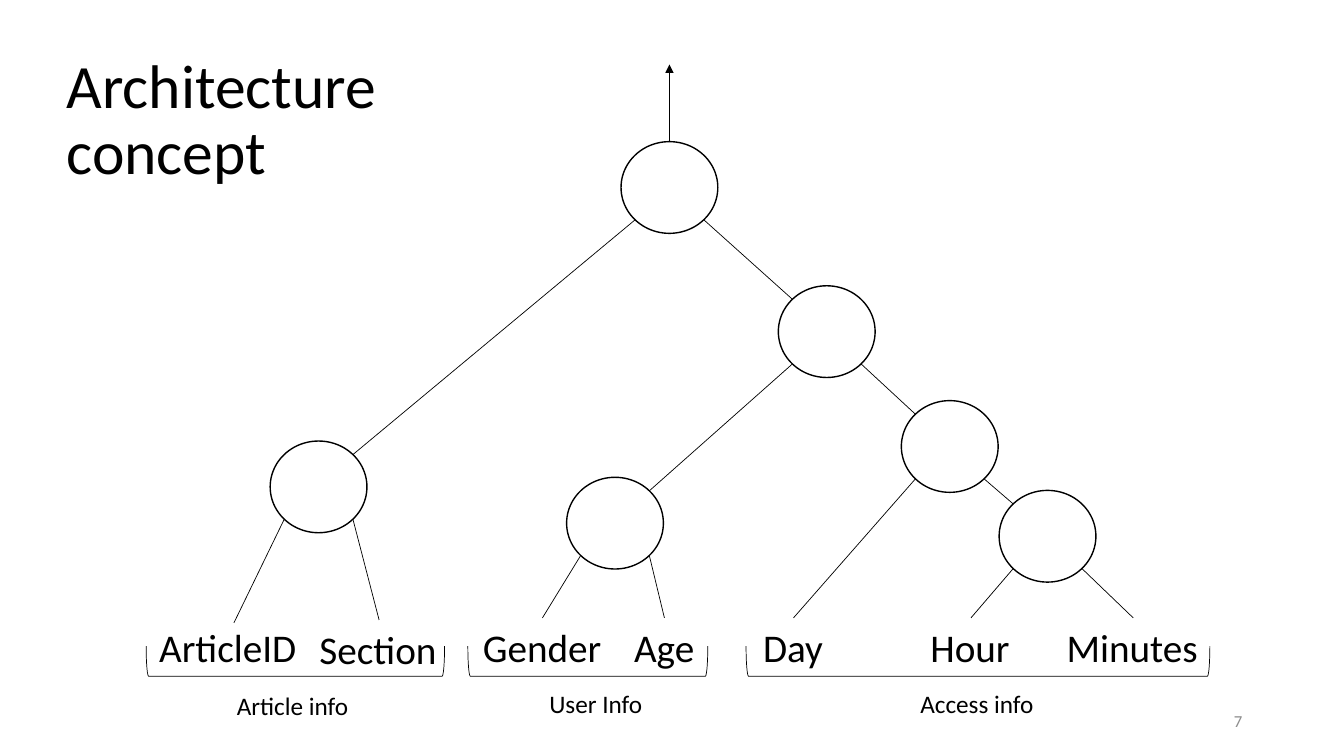
from dataclasses import dataclass

from lxml import etree
from pptx import Presentation
from pptx.dml.color import RGBColor
from pptx.enum.shapes import MSO_CONNECTOR, MSO_SHAPE
from pptx.enum.text import MSO_ANCHOR, MSO_AUTO_SIZE, PP_ALIGN
from pptx.oxml.ns import qn
from pptx.util import Inches, Pt

LINE = MSO_CONNECTOR.STRAIGHT
OVAL, BRACKET = MSO_SHAPE.OVAL, MSO_SHAPE.LEFT_BRACKET
MIDDLE, TOP = MSO_ANCHOR.MIDDLE, MSO_ANCHOR.TOP
LEFT, RIGHT = PP_ALIGN.LEFT, PP_ALIGN.RIGHT
GROW, FIXED = MSO_AUTO_SIZE.SHAPE_TO_FIT_TEXT, MSO_AUTO_SIZE.NONE


@dataclass(frozen=True)
class Theme:
    font: str = "Calibri"
    ink: RGBColor = RGBColor(0, 0, 0)
    paper: RGBColor = RGBColor(255, 255, 255)
    grey: RGBColor = RGBColor(0x8C, 0x8C, 0x8C)
    title: float = 44
    leaf: float = 28
    group: float = 18
    number: float = 12
    thin: float = 0.5
    rim: float = 1


WIDE, HIGH = 0.96, 0.91
DX, DY = 0.34, 0.32  # from a node's centre to its diagonal points

# node: centre
NODES = {
    "root": (6.64, 1.86),
    "article": (3.16, 4.83),
    "context": (8.2, 3.29),
    "user": (6.1, 5.19),
    "access": (9.42, 4.43),
    "time": (10.39, 5.32),
}
# parent, child
EDGES = [("root", "article"), ("root", "context"), ("context", "user"),
         ("context", "access"), ("access", "time")]
# label, box left, top and width, parent, side, end of its line
LEAVES = [
    ("ArticleID", 1.48, 6.13, 1.58, "article", -1, (2.32, 6.18)),
    ("Section", 3.07, 6.15, 1.38, "article", 1, (3.76, 6.15)),
    ("Gender", 4.69, 6.13, 1.39, "user", -1, (5.38, 6.13)),
    ("Age", 6.19, 6.13, 0.81, "user", 1, (6.59, 6.13)),
    ("Day", 7.47, 6.13, 0.8, "access", -1, (7.87, 6.13)),
    ("Hour", 9.13, 6.13, 1, "time", -1, (9.63, 6.13)),
    ("Minutes", 10.48, 6.13, 1.52, "time", 1, (11.24, 6.13)),
]
# label, box left, top and width, bracket left and width
GROUPS = [
    ("Article info", 2.25, 6.8, 1.32, 1.45, 2.96),
    ("User Info", 5.35, 6.78, 1.13, 4.64, 2.38),
    ("Access info", 9.03, 6.78, 1.34, 7.4, 4.6),
]


class Canvas:
    def __init__(self, slide, theme):
        self.slide, self.theme = slide, theme

    def fill_text(self, frame, text, size, color=None, align=LEFT, **form):
        for name, value in form.items():
            setattr(frame, name, value)
        frame.text = text
        para = frame.paragraphs[0]
        para.alignment = align
        para.font.color.rgb = color or self.theme.ink
        for name, value in {"name": self.theme.font, "size": Pt(size), "bold": False}.items():
            setattr(para.font, name, value)
        return para

    def title(self, text, *box):
        shape = self.slide.shapes.title
        for name, value in zip(("left", "top", "width", "height"), box):
            setattr(shape, name, Inches(value))
        para = self.fill_text(shape.text_frame, text, self.theme.title,
                              word_wrap=True, auto_size=FIXED, vertical_anchor=MIDDLE)
        para.line_spacing = 0.9

    def label(self, text, box, size, **form):
        shape = self.slide.shapes.add_textbox(*map(Inches, box))
        form = {"word_wrap": False, "auto_size": GROW, "vertical_anchor": TOP} | form
        self.fill_text(shape.text_frame, text, size, **form)

    def shape(self, kind, box, width):
        shape = self.slide.shapes.add_shape(kind, *map(Inches, box))
        shape.shadow.inherit = False
        shape.line.color.rgb = self.theme.ink
        shape.line.width = Pt(width)
        return shape

    def node(self, x, y):
        box = (x - WIDE / 2, y - HIGH / 2, WIDE, HIGH)
        fill = self.shape(OVAL, box, self.theme.rim).fill
        fill.solid()
        fill.fore_color.rgb = self.theme.paper

    def bracket(self, left, top, width, depth):
        """Draw a bracket that opens upward; the box is as seen on the slide."""
        box = (left + (width - depth) / 2, top + (depth - width) / 2, depth, width)
        shape = self.shape(BRACKET, box, self.theme.thin)
        shape.rotation = 270
        shape.fill.background()

    def line(self, start, end, arrow=False):
        line = self.slide.shapes.add_connector(LINE, *map(Inches, (*start, *end)))
        line.line.color.rgb = self.theme.ink
        line.line.width = Pt(self.theme.thin)
        props = line._element.spPr
        if arrow:
            etree.SubElement(props.find(qn("a:ln")), qn("a:tailEnd"), type="triangle")
        etree.SubElement(props, qn("a:effectLst"))


def port(name, side, end):
    """Diagonal point of a node: side -1 is left, end -1 is top."""
    x, y = NODES[name]
    return x + side * DX, y + end * DY


def main():
    deck = Presentation()
    deck.slide_width, deck.slide_height = Inches(13.33), Inches(7.5)
    theme = Theme()
    page = Canvas(deck.slides.add_slide(deck.slide_layouts[5]), theme)

    page.title("Architecture concept", 0.56, 0.48, 3.38, 1.45)
    page.label("7", (12, 6.95, 0.42, 0.4), theme.number, color=theme.grey, align=RIGHT,
               word_wrap=True, auto_size=FIXED, vertical_anchor=MIDDLE)

    for spot in NODES.values():
        page.node(*spot)
    for parent, child in EDGES:
        side = 1 if NODES[child][0] > NODES[parent][0] else -1
        page.line(port(parent, side, 1), port(child, -side, -1))
    for text, left, top, width, parent, side, end in LEAVES:
        page.label(text, (left, top, width, 0.57), theme.leaf)
        page.line(port(parent, side, 1), end)
    for text, left, top, width, start, span in GROUPS:
        page.label(text, (left, top, width, 0.4), theme.group)
        page.bracket(start, 6.41, span, 0.3)

    x, y = NODES["root"]
    page.line((x, y - HIGH / 2), (x, 0.64), arrow=True)
    deck.save("out.pptx")


if __name__ == "__main__":
    main()
